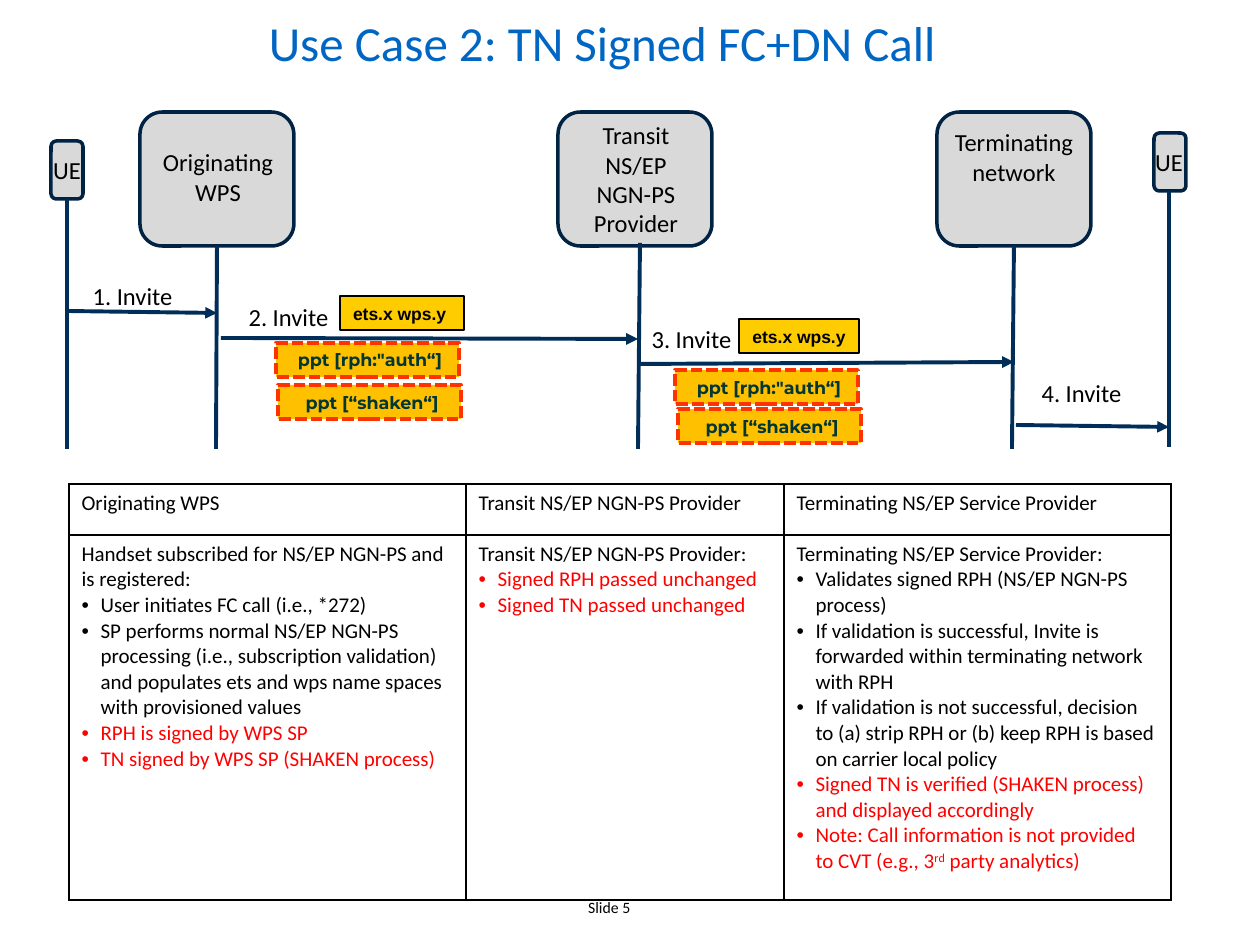
import pptx
import pptx.util
import pptx.dml.color
import pptx.enum.dml
import pptx.enum.shapes
import pptx.enum.text
import pptx.oxml
import pptx.oxml.ns

PX = 914400 / 126
SHAPES = pptx.enum.shapes.MSO_SHAPE
ALIGN = pptx.enum.text.PP_ALIGN
MIDDLE = pptx.enum.text.MSO_ANCHOR.MIDDLE
COLORS = {"title": "0066C3", "text": "000000", "change": "FF0000", "node": "D9D9D9",
          "node_edge": "002343", "line": "002E58", "header": "FFCC00",
          "token": "FFC000", "token_edge": "FF3300", "token_text": "033736"}
RGB = {key: pptx.dml.color.RGBColor.from_string(value) for key, value in COLORS.items()}


def px(*lengths):
    """Turn pixel lengths into EMU."""
    return [pptx.util.Emu(round(length * PX)) for length in lengths]


def write(paragraph, text, size, color="text", font="Calibri", bold=False, align=ALIGN.CENTER):
    paragraph.alignment = align
    run = paragraph.add_run()
    run.text = text
    run.font.size = pptx.util.Pt(size)
    run.font.name = font
    run.font.bold = bold
    run.font.color.rgb = RGB[color]
    return run


deck = pptx.Presentation()
deck.slide_width, deck.slide_height = px(1260, 945)
slide = deck.slides.add_slide(deck.slide_layouts[5])

title = slide.shapes.title
title.left, title.top, title.width, title.height = px(35, 10, 1134, 64)
title.text_frame.vertical_anchor = MIDDLE
write(title.text_frame.paragraphs[0], "Use Case 2: TN Signed FC+DN Call", 28, "title")

# Network nodes
nodes = [(140, 112, 154, 134), (937, 112, 154, 134), (558, 112, 154, 134),
         (51, 141, 32, 58), (1154, 133, 32, 58)]
for box in nodes:
    node = slide.shapes.add_shape(SHAPES.ROUNDED_RECTANGLE, *px(*box))
    node.shadow.inherit = False
    node.fill.solid()
    node.fill.fore_color.rgb = RGB["node"]
    node.line.color.rgb = RGB["node_edge"]
    node.line.width = pptx.util.Pt(2)

# Lifelines, then the invite arrows between them: x1, y1, x2, y2
lifelines = [(217, 246, 216, 449), (640, 243, 638, 449), (1014, 246, 1012, 449),
             (67, 199, 67, 449), (1169, 191, 1169, 447)]
invites = [(67, 311, 217, 313), (221, 338, 638, 339), (639, 364, 1014, 362),
           (1016, 425, 1169, 427)]
for ends in lifelines + invites:
    link = slide.shapes.add_connector(pptx.enum.shapes.MSO_CONNECTOR.STRAIGHT, *px(*ends))
    link.line.color.rgb = RGB["line"]
    link.line.width = pptx.util.Pt(2.25)
    if ends in invites:
        link.line._get_or_add_ln().append(pptx.oxml.parse_xml(
            f'<a:tailEnd {pptx.oxml.ns.nsdecls("a")} type="triangle"/>'))
    link._element.spPr.append(pptx.oxml.parse_xml(
        f'<a:effectLst {pptx.oxml.ns.nsdecls("a")}/>'))

# Labels: text, size, box
labels = [
    ("Originating WPS", 14, (149, 141, 138, 72)),
    ("Transit NS/EP NGN-PS Provider", 14, (567, 114, 138, 131)),
    ("Terminating network", 14, (938, 121, 152, 72)),
    ("UE", 14, (23, 149, 88, 43)),
    ("UE", 14, (1125, 141, 88, 43)),
    ("1. Invite", 14, (61, 275, 143, 43)),
    ("2. Invite", 14, (217, 296, 143, 43)),
    ("3. Invite", 14, (620, 318, 143, 43)),
    ("4. Invite", 14, (1010, 372, 143, 43)),
    ("Slide 5 ", 9, (485, 892, 252, 32)),
]
for text, size, box in labels:
    label = slide.shapes.add_textbox(*px(*box)).text_frame
    label.word_wrap = True
    write(label.paragraphs[0], text, size)

# Message headers (solid edge) and signed tokens (dashed edge)
badges = [
    ("ets.x wps.y ", "header", (340, 296, 124, 34)),
    ("ets.x wps.y", "header", (739, 319, 120, 34)),
    (" ppt [“shaken“]", "token", (278, 385, 183, 34)),
    (" ppt [“shaken“]", "token", (678, 409, 183, 34)),
    (' ppt [rph:"auth“]', "token", (276, 343, 183, 34)),
    (' ppt [rph:"auth“]', "token", (675, 370, 183, 34)),
]
for text, kind, box in badges:
    badge = slide.shapes.add_shape(SHAPES.RECTANGLE, *px(*box))
    badge.shadow.inherit = False
    badge.fill.solid()
    badge.fill.fore_color.rgb = RGB[kind]
    badge.text_frame.vertical_anchor = MIDDLE
    badge.text_frame.word_wrap = kind == "token"
    if kind == "token":
        badge.line.color.rgb = RGB["token_edge"]
        badge.line.width = pptx.util.Pt(2.25)
        badge.line.dash_style = pptx.enum.dml.MSO_LINE.SQUARE_DOT
        write(badge.text_frame.paragraphs[0], text, 10, "token_text", "Montserrat", True)
    else:
        badge.line.color.rgb = RGB["text"]
        badge.line.width = pptx.util.Pt(0.75)
        write(badge.text_frame.paragraphs[0], text, 10, "text", "Arial", True)

# Responsibilities: heading, lead-in, kept steps, new steps
columns = [
    (397, "Originating WPS", "Handset subscribed for NS/EP NGN-PS and is registered:",
     ["User initiates FC call (i.e., *272)",
      "SP performs normal NS/EP NGN-PS processing (i.e., subscription validation) "
      "and populates ets and wps name spaces with provisioned values"],
     ["RPH is signed by WPS SP", "TN signed by WPS SP (SHAKEN process)"]),
    (318, "Transit NS/EP NGN-PS Provider", "Transit NS/EP NGN-PS Provider:",
     [], ["Signed RPH passed unchanged", "Signed TN passed unchanged "]),
    (387, "Terminating NS/EP Service Provider", "Terminating NS/EP Service Provider:",
     ["Validates signed RPH (NS/EP NGN-PS process)",
      "If validation is successful, Invite is forwarded within terminating network with RPH",
      "If validation is not successful, decision to (a) strip RPH or (b) keep RPH "
      "is based on carrier local policy"],
     ["Signed TN is verified (SHAKEN process) and displayed accordingly",
      "Note: Call information is not provided to CVT (e.g., 3^rd^ party analytics) "]),
]
table = slide.shapes.add_table(2, 3, *px(69, 484, 1102, 416)).table
table.first_row = table.horz_banding = False
table.rows[0].height, table.rows[1].height = px(51, 365)
for index, (width, heading, lead, kept, new) in enumerate(columns):
    table.columns[index].width = px(width)[0]
    head, body = table.cell(0, index), table.cell(1, index)
    write(head.text_frame.paragraphs[0], heading, 12, align=ALIGN.LEFT)
    write(body.text_frame.paragraphs[0], lead, 12, align=ALIGN.LEFT)
    steps = [(step, "text") for step in kept] + [(step, "change") for step in new]
    for step, color in steps:
        paragraph = body.text_frame.add_paragraph()
        # Text between carets is superscript
        for part, text in enumerate(step.split("^")):
            run = write(paragraph, text, 12, color, align=ALIGN.LEFT)
            if part % 2:
                run.font._element.set("baseline", "30000")
        properties = paragraph._p.get_or_add_pPr()
        indent = px(19)[0]
        properties.set("marL", str(indent))
        properties.set("indent", str(-indent))
        for bullet in ('buFont {} typeface="Arial"', 'buChar {} char="•"'):
            properties.append(pptx.oxml.parse_xml(
                f'<a:{bullet.format(pptx.oxml.ns.nsdecls("a"))}/>'))
    for cell in (head, body):
        cell.fill.background()
        for order, side in enumerate(("lnL", "lnR", "lnT", "lnB")):
            cell._tc.get_or_add_tcPr().insert(order, pptx.oxml.parse_xml(
                f'<a:{side} {pptx.oxml.ns.nsdecls("a")} w="12700"><a:solidFill>'
                f'<a:srgbClr val="{COLORS["text"]}"/></a:solidFill></a:{side}>'))

deck.save("out.pptx")
